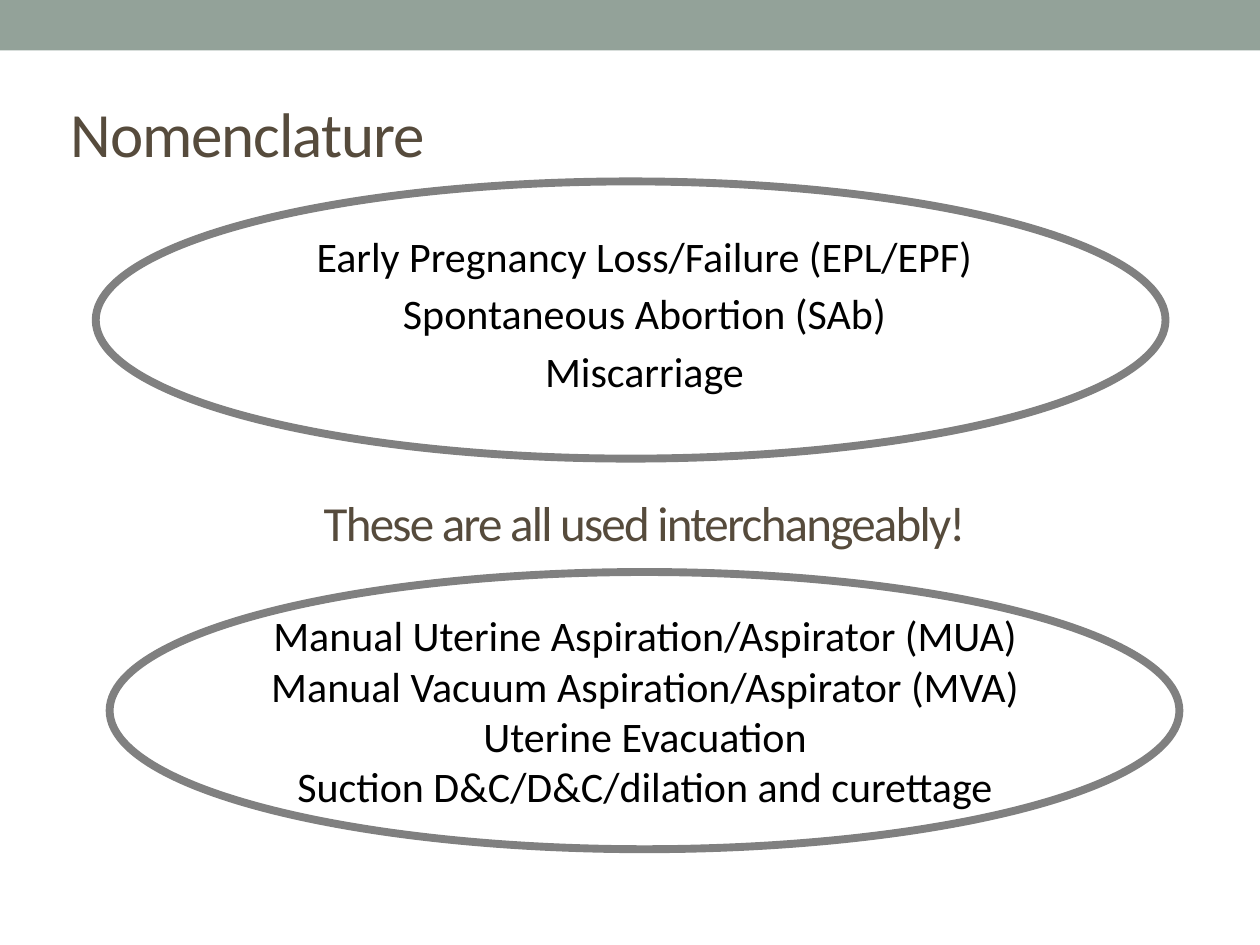
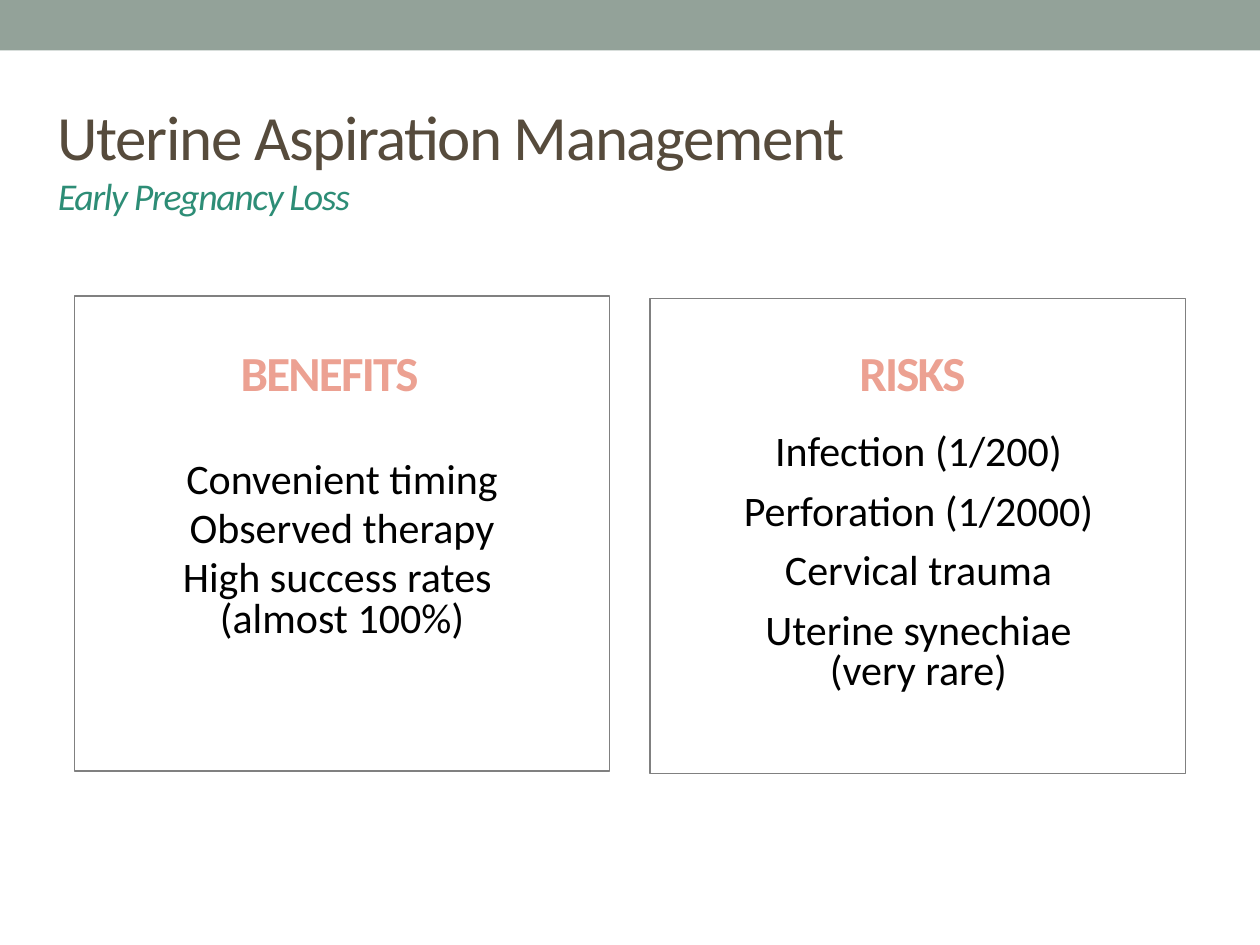
from copy import deepcopy

from lxml.etree import SubElement
from pptx import Presentation
from pptx.dml.color import RGBColor
from pptx.enum.shapes import MSO_SHAPE
from pptx.enum.text import MSO_ANCHOR, MSO_AUTO_SIZE, PP_ALIGN
from pptx.oxml.ns import qn
from pptx.util import Inches, Pt

# Content
NOMENCLATURE = {
    "title": ["Nomenclature"],
    "loss_terms": [
        "Early Pregnancy Loss/Failure (EPL/EPF)",
        "Spontaneous Abortion (SAb)",
        "Miscarriage",
    ],
    "remark": ["These are all used interchangeably!"],
    "procedure_terms": [
        "Manual Uterine Aspiration/Aspirator (MUA)",
        "Manual Vacuum Aspiration/Aspirator (MVA)",
        "Uterine Evacuation",
        "Suction D&C/D&C/dilation and curettage",
    ],
}
MANAGEMENT = {
    "title": ["Uterine Aspiration Management", "Early Pregnancy Loss"],
    "benefits_heading": ["BENEFITS"],
    "benefits": [
        "Convenient timing",
        "Observed therapy",
        "High success rates \v(almost 100%)",
    ],
    "risks_heading": ["RISKS"],
    "risks": [
        "Infection (1/200)",
        "Perforation (1/2000)",
        "Cervical trauma",
        "Uterine synechiae\v(very rare)",
    ],
}

# Shared look
SAGE = RGBColor(0x93, 0xA2, 0x99)
BROWN = RGBColor(0x56, 0x4B, 0x3C)
GREEN = RGBColor(0x2D, 0x8D, 0x76)
CORAL = RGBColor(0xEC, 0xA1, 0x92)
GRAY = RGBColor(0x80, 0x80, 0x80)
BLACK = RGBColor(0, 0, 0)
WHITE = RGBColor(0xFF, 0xFF, 0xFF)

TITLE = {"size": 36, "color": BROWN, "tracking": -0.6, "align": PP_ALIGN.LEFT}
MANAGEMENT_TITLE = TITLE | {"tracking": -0.8}
SUBTITLE = MANAGEMENT_TITLE | {"size": 21.6, "color": GREEN, "italic": True}
TERMS = {"size": 24, "color": BLACK, "align": PP_ALIGN.CENTER}
REMARK = TERMS | {"size": 28, "color": BROWN, "tracking": -1}
HEADING = {"size": 28, "color": CORAL, "tracking": -1, "bold": True,
           "align": PP_ALIGN.LEFT}

ELLIPSE_SIZE = (8.49, 2.2)
CARD_SIZE = (4.25, 3.77)


def place(shape, left, top, width, height):
    lengths = {"left": left, "top": top, "width": width, "height": height}
    for name, value in lengths.items():
        setattr(shape, name, Inches(value))


def write(shape, lines, styles, anchor=MSO_ANCHOR.TOP):
    """Fill a shape with one paragraph per line; the last style repeats."""
    frame = shape.text_frame
    frame_format = {"word_wrap": True, "auto_size": MSO_AUTO_SIZE.NONE,
                    "vertical_anchor": anchor}
    for side in ("left", "top", "right", "bottom"):
        frame_format[f"margin_{side}"] = Inches(0.05)
    for name, value in frame_format.items():
        setattr(frame, name, value)

    for index, line in enumerate(lines):
        style = styles[min(index, len(styles) - 1)]
        paragraph = frame.add_paragraph() if index else frame.paragraphs[0]
        paragraph.text = line
        properties = paragraph._p.get_or_add_pPr()
        properties.set("marL", "0")
        properties.set("indent", "0")
        SubElement(properties, qn("a:buNone"))
        paragraph_format = {
            "alignment": style["align"],
            "line_spacing": style.get("line_spacing", 1.0),
            "space_before": Pt(style.get("before", 0) if index else 0),
            "space_after": Pt(0),
        }
        for name, value in paragraph_format.items():
            setattr(paragraph, name, value)
        for run in paragraph.runs:
            font_format = {"name": "Calibri", "size": Pt(style["size"]),
                           "bold": style.get("bold", False),
                           "italic": style.get("italic", False)}
            for name, value in font_format.items():
                setattr(run.font, name, value)
            run.font.color.rgb = style["color"]
            run_properties = run._r.get_or_add_rPr()
            run_properties.set("spc", str(round(style.get("tracking", 0) * 100)))
        # Line breaks take the size of the text around them
        for line_break in paragraph._p.findall(qn("a:br")):
            line_break.append(deepcopy(run_properties))


def add_text(slide, box, lines, style, anchor=MSO_ANCHOR.TOP):
    text_box = slide.shapes.add_textbox(*map(Inches, box))
    write(text_box, lines, [style], anchor)


def fill_placeholder(placeholder, box, lines, styles, anchor=MSO_ANCHOR.TOP):
    place(placeholder, *box)
    write(placeholder, lines, styles, anchor)


def add_backdrop(slide, kind, box, fill, line=None, weight=0):
    """Add a preset shape behind the text of the slide."""
    shape = slide.shapes.add_shape(kind, *map(Inches, box))
    shape.shadow.inherit = False
    shape.fill.solid()
    shape.fill.fore_color.rgb = fill
    if line is None:
        shape.line.fill.background()
    else:
        shape.line.color.rgb = line
        shape.line.width = Pt(weight)
    slide.shapes.element.insert(2, shape.element)
    return shape


def build_nomenclature(slide):
    content = NOMENCLATURE
    for corner in ((0.76, 1.44), (0.87, 4.54)):
        add_backdrop(slide, MSO_SHAPE.OVAL, corner + ELLIPSE_SIZE, WHITE, GRAY, 4.5)
    fill_placeholder(slide.shapes.title, (0.51, 0.66, 9, 0.78),
                     content["title"], [TITLE], MSO_ANCHOR.MIDDLE)
    fill_placeholder(slide.placeholders[1], (2.05, 1.78, 6.13, 1.53),
                     content["loss_terms"], [TERMS | {"before": 4}])
    add_text(slide, (0.57, 3.86, 9.09, 0.54), content["remark"], REMARK)
    add_text(slide, (1.83, 4.81, 6.58, 1.66), content["procedure_terms"],
             TERMS, MSO_ANCHOR.MIDDLE)


def build_management(slide):
    content = MANAGEMENT
    for corner in ((5.16, 2.37), (0.59, 2.35)):
        add_backdrop(slide, MSO_SHAPE.RECTANGLE, corner + CARD_SIZE, WHITE, GRAY, 0.75)
    fill_placeholder(slide.shapes.title, (0.41, 0.72, 9, 1.25),
                     content["title"], [MANAGEMENT_TITLE, SUBTITLE])
    tight = TERMS | {"line_spacing": 0.8}
    fill_placeholder(slide.placeholders[1], (0.83, 3.62, 3.77, 2.26),
                     content["benefits"], [tight | {"before": 5}])
    add_text(slide, (5.22, 3.4, 4.14, 2.19), content["risks"], tight | {"before": 11})
    add_text(slide, (1.86, 2.67, 1.71, 0.54), content["benefits_heading"], HEADING)
    add_text(slide, (6.77, 2.67, 1.03, 0.54), content["risks_heading"], HEADING)


def main():
    deck = Presentation()
    deck.slide_width, deck.slide_height = Inches(10), Inches(7.5)
    layout = deck.slide_layouts[1]
    slides = [deck.slides.add_slide(layout) for _ in range(2)]

    # The top band belongs to the master, so every slide shows it
    band = add_backdrop(slides[0], MSO_SHAPE.RECTANGLE, (0, 0, 10, 0.4), SAGE)
    deck.slide_master.shapes.element.insert(2, band.element)

    for build, slide in zip((build_nomenclature, build_management), slides):
        build(slide)
    deck.save("out.pptx")


if __name__ == "__main__":
    main()
